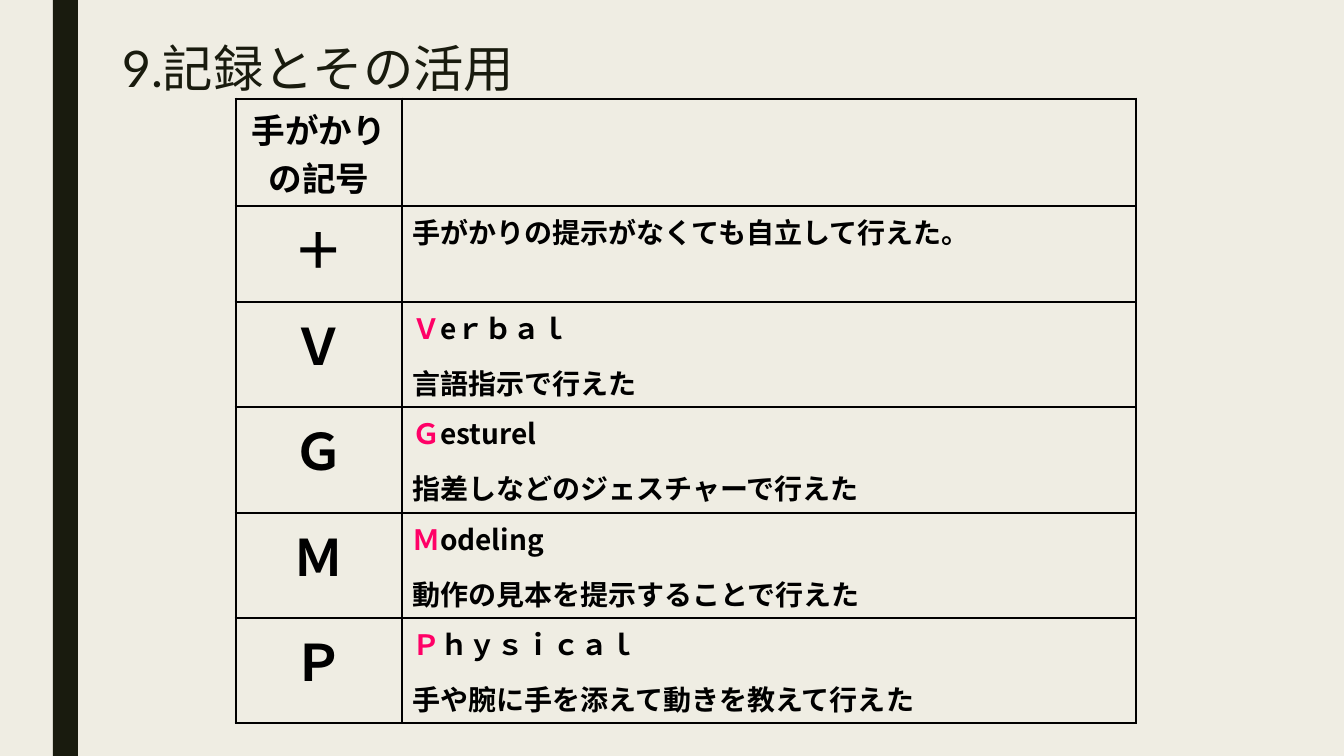
from lxml import etree
from pptx import Presentation
from pptx.dml.color import RGBColor
from pptx.enum.shapes import MSO_SHAPE
from pptx.enum.text import MSO_ANCHOR, PP_ALIGN
from pptx.oxml.ns import qn
from pptx.util import Pt

EMU_PER_PX = 914400 / 100.8
RECT = MSO_SHAPE.RECTANGLE
TOP = MSO_ANCHOR.TOP
LEFT, CENTER = PP_ALIGN.LEFT, PP_ALIGN.CENTER

PAPER, INK, BLACK, PINK = "EFEDE3", "191B0E", "000000", "FF0066"
LATIN, JAPANESE = "Lato", "Noto Sans CJK JP"
THIN, THICK = 1, 2.25
PLAIN_TABLE_STYLE = "{2D5ABB26-0587-4C30-8999-92F81FD0307C}"

CUES = [
    ("＋", "", "", "手がかりの提示がなくても自立して行えた。"),
    ("Ｖ", "Ｖ", "eｒｂａｌ", "言語指示で行えた"),
    ("Ｇ", "Ｇ", "esturel", "指差しなどのジェスチャーで行えた"),
    ("Ｍ", "Ｍ", "odeling", "動作の見本を提示することで行えた"),
    ("Ｐ", "Ｐ", "ｈｙｓｉｃａｌ", "手や腕に手を添えて動きを教えて行えた"),
]
COLUMN_WIDTHS = [166, 734]
ROW_HEIGHTS = [107, 96, 105, 106, 105, 105]


def px(length):
    return round(length * EMU_PER_PX)


def rgb(value):
    return RGBColor.from_string(value)


def add_run(paragraph, text, size=20, color=BLACK, font=JAPANESE, bold=True):
    run = paragraph.add_run()
    run.text = text
    run.font.size = Pt(size)
    run.font.bold = bold
    run.font.name = font
    run.font.color.rgb = rgb(color)
    east_asian = etree.SubElement(run.font._element, qn("a:ea"))
    east_asian.set("typeface", JAPANESE)


class SlideBuilder:
    def __init__(self, presentation):
        self.slide = presentation.slides.add_slide(presentation.slide_layouts[6])
        background = self.slide.background.fill
        background.solid()
        background.fore_color.rgb = rgb(PAPER)

    def bar(self, x, y, w, h, color):
        bar = self.slide.shapes.add_shape(RECT, px(x), px(y), px(w), px(h))
        bar.shadow.inherit = False
        bar.fill.solid()
        bar.fill.fore_color.rgb = rgb(color)
        bar.line.fill.background()

    def title(self, x, y, w, h, text):
        box = self.slide.shapes.add_textbox(px(x), px(y), px(w), px(h))
        frame = box.text_frame
        frame.word_wrap = True
        frame.vertical_anchor = TOP
        frame.margin_top = px(5)
        frame.margin_bottom = 0
        heading = frame.paragraphs[0]
        heading.line_spacing = 0.89
        add_run(heading, text, size=36, color=INK, font=LATIN, bold=False)

    def table(self, x, y, widths, heights):
        frame = self.slide.shapes.add_table(
            len(heights), len(widths), px(x), px(y),
            px(sum(widths)), px(sum(heights)))
        table = frame.table
        table.first_row = table.horz_banding = False
        style = table._tbl.tblPr.find(qn("a:tableStyleId"))
        style.text = PLAIN_TABLE_STYLE
        for column, width in zip(table.columns, widths):
            column.width = px(width)
        for row, height in zip(table.rows, heights):
            row.height = px(height)
        # Thick frame outside, thin lines inside
        last_row, last_column = len(heights) - 1, len(widths) - 1
        for r in range(len(heights)):
            for c in range(len(widths)):
                cell = table.cell(r, c)
                outer_sides = {"lnL": c == 0, "lnR": c == last_column,
                               "lnT": r == 0, "lnB": r == last_row}
                for side, is_outer in outer_sides.items():
                    self.border(cell, side, THICK if is_outer else THIN)
                cell.fill.background()
        return table

    def border(self, cell, side, width):
        properties = cell._tc.get_or_add_tcPr()
        line = etree.SubElement(properties, qn(f"a:{side}"),
                                w=str(int(Pt(width))), cap="flat", cmpd="sng")
        fill = etree.SubElement(line, qn("a:solidFill"))
        etree.SubElement(fill, qn("a:srgbClr"), val=BLACK)
        etree.SubElement(line, qn("a:prstDash"), val="solid")

    def cell_text(self, cell, lines, size=20, align=LEFT):
        """Each line is a list of (text, color) pairs."""
        frame = cell.text_frame
        for index, parts in enumerate(lines):
            paragraph = frame.add_paragraph() if index else frame.paragraphs[0]
            paragraph.alignment = align
            paragraph.space_before = paragraph.space_after = Pt(size / 4)
            for text, color in parts:
                add_run(paragraph, text, size=size, color=color)


def main():
    presentation = Presentation()
    presentation.slide_width, presentation.slide_height = px(1344), px(756)
    builder = SlideBuilder(presentation)

    # Side bar and title
    builder.bar(53, 0, 25, 756, INK)
    builder.title(112, 39, 1178, 39, "9.記録とその活用")

    # Cue symbols and their meanings
    cue_table = builder.table(236, 99, COLUMN_WIDTHS, ROW_HEIGHTS)
    builder.cell_text(cue_table.cell(0, 0), [[("手がかりの記号", BLACK)]],
                      size=24, align=CENTER)
    for row, (symbol, initial, rest, meaning) in enumerate(CUES, start=1):
        builder.cell_text(cue_table.cell(row, 0), [[(symbol, BLACK)]],
                          size=36, align=CENTER)
        lines = [[(meaning, BLACK)]]
        if initial:
            lines.insert(0, [(initial, PINK), (rest, BLACK)])
        builder.cell_text(cue_table.cell(row, 1), lines)

    presentation.save("out.pptx")


if __name__ == "__main__":
    main()
